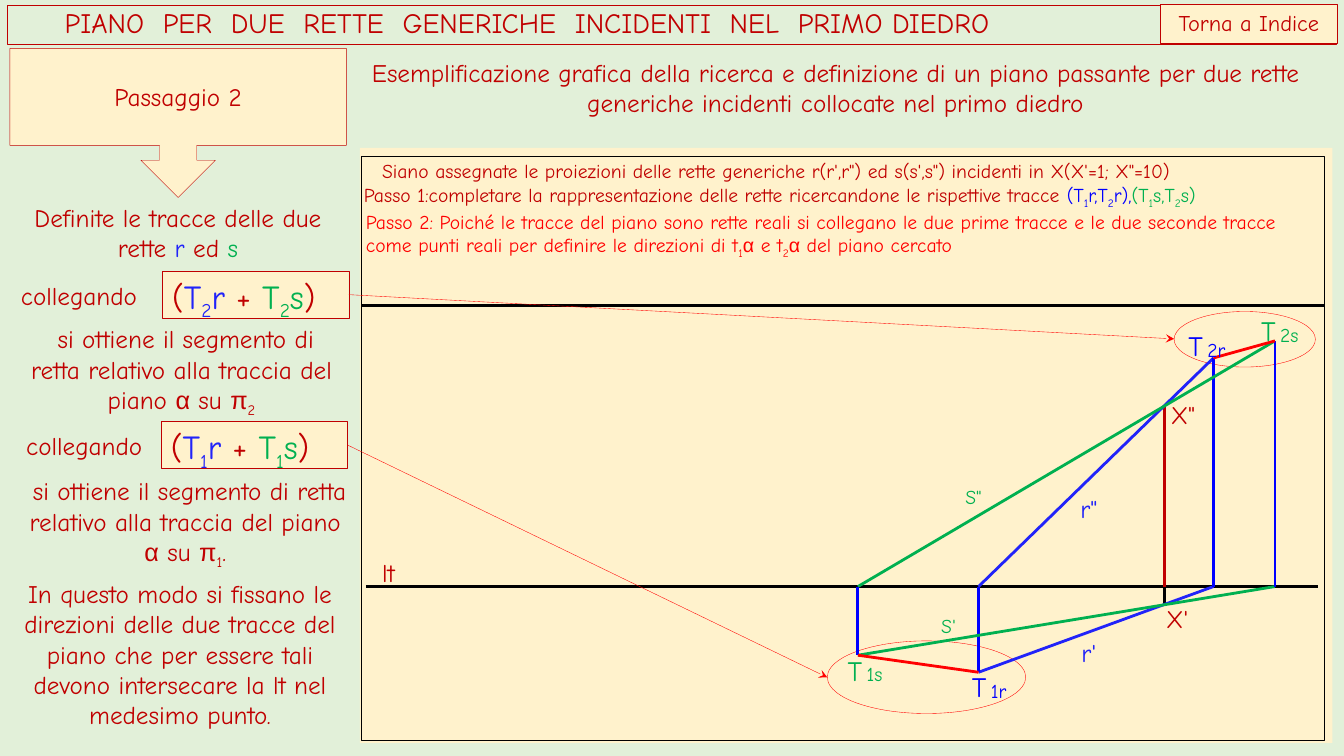
from itertools import groupby

from lxml.etree import SubElement
from pptx import Presentation
from pptx.dml.color import RGBColor
from pptx.enum.shapes import MSO_CONNECTOR, MSO_SHAPE
from pptx.enum.text import MSO_ANCHOR, PP_ALIGN
from pptx.oxml.ns import qn
from pptx.util import Cm, Pt

RED, BRIGHT, CREAM, BLACK = "C00000", "FF0000", "FFF2CC", "000000"
BLUE, PURE_BLUE, GREEN = "2123F9", "0000FF", "00B050"
SUBSCRIPTS = {"₁": "1", "₂": "2"}
LEFT, CENTER = PP_ALIGN.LEFT, PP_ALIGN.CENTER
TOP, MIDDLE = MSO_ANCHOR.TOP, MSO_ANCHOR.MIDDLE


def color(value):
    return RGBColor.from_string(value)


def write(shape, parts, size, align=LEFT, anchor=TOP, wrap=True):
    frame = shape.text_frame
    frame.word_wrap = wrap
    frame.vertical_anchor = anchor
    paragraph = frame.paragraphs[0]
    paragraph.alignment = align
    paragraph.font.size = Pt(size)
    pieces = [(kind, "".join(letters), tint) for text, tint in parts
              for kind, letters in groupby(
                  text, lambda c: "sub" if c in SUBSCRIPTS else "greek" if c in "απ" else "plain")]
    tints = {tint for _, _, tint in pieces}
    greek = any(kind == "greek" for kind, _, _ in pieces)
    if len(tints) == 1:
        paragraph.font.color.rgb = color(pieces[0][2])
    if not greek:
        paragraph.font.name = "Comic Neue"
    for kind, text, tint in pieces:
        run = paragraph.add_run()
        run.text = SUBSCRIPTS.get(text, text)
        if len(tints) > 1:
            run.font.color.rgb = color(tint)
        if greek:
            run.font.name = "Arial" if kind == "greek" else "Comic Neue"
        if kind == "sub":
            run.font._element.set("baseline", "-25000")
    return paragraph


prs = Presentation()
prs.slide_width, prs.slide_height = Cm(33.87), Cm(19.05)
slide = prs.slides.add_slide(prs.slide_layouts[6])
slide.background.fill.solid()
slide.background.fill.fore_color.rgb = color("E2F0D9")

RECT, OVAL = MSO_SHAPE.RECTANGLE, MSO_SHAPE.OVAL
outlines = []
for kind, x, y, w, h, fill, line, weight in [
    (RECT, 0.18, 0.13, 33.5, 0.99, None, RED, 0.25),
    (MSO_SHAPE.DOWN_ARROW_CALLOUT, 0.25, 1.22, 8.48, 3.76, CREAM, RED, 0.25),
    (RECT, 29.24, 0.1, 4.47, 1, CREAM, RED, 0.25),
    (RECT, 9.07, 3.73, 24.51, 14.99, CREAM, None, 0),
    (RECT, 9.12, 3.94, 24.26, 14.71, CREAM, BLACK, 0),
    (RECT, 4.06, 10.62, 4.7, 1.19, CREAM, RED, 0.25),
    (RECT, 4.09, 6.83, 4.7, 1.19, CREAM, RED, 0.25),
    (OVAL, 20.85, 16.15, 5, 1.83, None, BRIGHT, 0.25),
    (OVAL, 29.59, 7.85, 3.56, 1.4, None, BRIGHT, 0.25),
]:
    outline = slide.shapes.add_shape(kind, Cm(x), Cm(y), Cm(w), Cm(h))
    outline.shadow.inherit = False
    if fill:
        outline.fill.solid()
        outline.fill.fore_color.rgb = color(fill)
    else:
        outline.fill.background()
    if line:
        outline.line.color.rgb = color(line)
        outline.line.width = Pt(weight)
    else:
        outline.line.fill.background()
    outlines.append(outline)
title, step, index_button, _, _, first_traces, second_traces, _, _ = outlines

heading = write(title, [("PIANO  PER  DUE  RETTE  GENERICHE  INCIDENTI  NEL  PRIMO DIEDRO", RED)],
                20, anchor=MIDDLE)
heading.line_spacing = 0.9
title.text_frame.margin_left = Cm(1.45)
write(step, [("Passaggio 2", RED)], 18, CENTER, MIDDLE)
write(index_button, [("Torna a Indice", RED)], 16, CENTER)
for traces, r_trace, s_trace in [(first_traces, "T₁r", "T₁s"), (second_traces, "T₂r", "T₂s")]:
    write(traces, [("(", RED), (r_trace, BLUE), (" + ", RED), (s_trace, GREEN), (")", RED)], 24)

LT = 14.78
T1S, T1R = (21.62, 16.51), (24.66, 16.94)
T2R, T2S = (30.58, 9.02), (32.13, 8.59)
X1, X2 = (29.34, 15.24), (29.34, 10.24)
for start, end, tint, weight, source in [
    ((9.22, LT), (33.22, LT), BLACK, 0, None),
    ((33.38, 7.7), (9.12, 7.7), BLACK, 0, None),
    ((X1[0], 14.68), X1, BLACK, 0, None),
    ((X2[0], LT), X2, RED, 0, None),
    (T2R, (T1R[0], LT), BLUE, 0, None),
    (T1R, (T2R[0], LT), BLUE, 0, None),
    ((T1R[0], LT), T1R, PURE_BLUE, 0, None),
    ((T2R[0], LT), T2R, PURE_BLUE, 0, None),
    ((T2S[0], LT), T1S, GREEN, 0, None),
    (T2S, (T1S[0], LT), GREEN, 0, None),
    ((T1S[0], LT), T1S, PURE_BLUE, 0, None),
    ((T2S[0], LT), T2S, PURE_BLUE, 0, None),
    (T2R, T2S, BRIGHT, 0, None),
    (T1S, T1R, BRIGHT, 0, None),
    ((8.79, 7.43), (29.59, 8.54), BRIGHT, 0.25, second_traces),
    ((8.76, 11.22), (20.85, 17.07), BRIGHT, 0.25, first_traces),
]:
    segment = slide.shapes.add_connector(
        MSO_CONNECTOR.STRAIGHT, *(Cm(v) for v in start + end))
    segment.line.color.rgb = color(tint)
    segment.line.width = Pt(weight)
    SubElement(segment._element.spPr, qn("a:effectLst"))
    if source:
        segment.begin_connect(source, 3)
        SubElement(segment.line._get_or_add_ln(), qn("a:tailEnd"), type="stealth")

labels = [
    (9.63, 14.05, 0.48, 0.76, 18, [("lt", RED)]),
    (29.39, 15.21, 0.71, 0.76, 18, [("X'", RED)]),
    (29.51, 10.06, 0.74, 0.76, 18, [('X"', RED)]),
    (23.72, 15.47, 0.53, 0.61, 14, [("S'", GREEN)]),
    (24.33, 12.22, 0.56, 0.61, 14, [('S"', GREEN)]),
    (27.25, 16.05, 0.56, 0.76, 18, [("r'", BLUE)]),
    (27.23, 12.42, 0.58, 0.76, 18, [('r"', BLUE)]),
    (9.63, 4.01, 22.56, 0.61, 14,
     [("Siano assegnate le proiezioni delle rette generiche r(r',r\") ed s(s',s\") "
       "incidenti in X(X'=1; X\"=10)", RED)]),
    (9.17, 4.6, 24.21, 0.61, 14,
     [("Passo 1:completare la rappresentazione delle rette ricercandone le rispettive tracce", RED),
      (" (T₁r,T₂r),", PURE_BLUE), ("(T₁s,T₂s)", GREEN)]),
]
for x, y, suffix, tint in [(24.49, 16.87, "1r", PURE_BLUE), (29.95, 8.28, "2r", PURE_BLUE),
                           (21.36, 16.46, "1s", GREEN), (31.78, 7.9, "2s", GREEN)]:
    labels += [(x, y, 0.48, 0.86, 20, [("T", tint)]),
               (x + 0.48, y + 0.23, 0.56, 0.61, 14, [(suffix, tint)])]
for x, y, w, h, size, parts in labels:
    label = slide.shapes.add_textbox(Cm(x), Cm(y), Cm(w), Cm(h))
    frame = label.text_frame
    frame.margin_left = frame.margin_right = frame.margin_top = frame.margin_bottom = 0
    write(label, parts, size, wrap=False)

segment_text = " si ottiene il segmento di retta relativo alla traccia del piano α su "
for x, y, w, h, size, align, parts in [
    (8.56, 1.32, 24.99, 1.8, 18, CENTER,
     [("Esemplificazione grafica della ricerca e definizione di un piano passante per due rette "
       "generiche incidenti collocate nel primo diedro", RED)]),
    (8.97, 5.16, 24.31, 1.45, 14, LEFT,
     [("Passo 2: Poiché le tracce del piano sono rette reali si collegano le due prime tracce e "
       "le due seconde tracce come punti reali per definire le direzioni di t₁α e t₂α "
       "del piano cercato", BRIGHT)]),
    (0.18, 4.98, 8.61, 1.8, 18, CENTER,
     [("Definite le tracce delle due rette ", RED), ("r", BLUE), (" ed ", RED), ("s", GREEN)]),
    (0.28, 6.93, 3.84, 1.02, 18, LEFT, [("collegando", RED)]),
    (0.28, 8.03, 8.59, 2.57, 18, CENTER, [(segment_text + "π₂", RED)]),
    (0.41, 10.72, 3.84, 1.02, 18, LEFT, [("collegando", RED)]),
    (0.25, 11.86, 8.84, 2.57, 18, CENTER, [(segment_text + "π₁.", RED)]),
    (0, 14.45, 9.07, 4.11, 18, CENTER,
     [("In questo modo si fissano le direzioni delle due tracce del piano che per essere tali "
       "devono intersecare la lt nel medesimo punto.", RED)]),
]:
    passage = slide.shapes.add_textbox(Cm(x), Cm(y), Cm(w), Cm(h))
    write(passage, parts, size, align)

prs.save("out.pptx")
